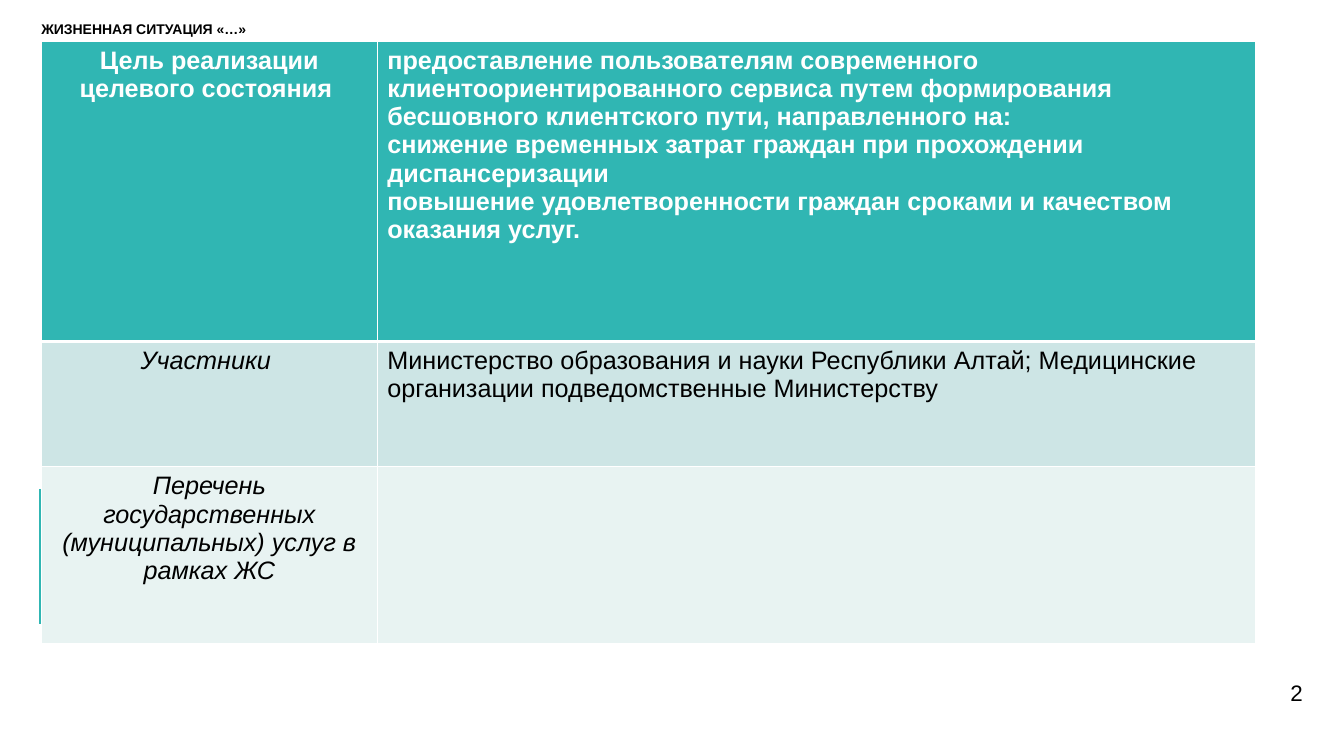
from dataclasses import dataclass

from lxml import etree
from pptx import Presentation
from pptx.dml.color import RGBColor
from pptx.enum import shapes, text
from pptx.oxml import ns
from pptx.util import Pt


@dataclass(frozen=True)
class Theme:
    font: str = "Arial"
    teal: str = "30B6B3"
    band: str = "CDE5E5"
    pale: str = "E8F3F2"
    ink: str = "000000"
    white: str = "FFFFFF"
    title_size: float = 10
    table_size: float = 18
    number_size: float = 16


THEME = Theme()
CENTER, RIGHT = text.PP_ALIGN.CENTER, text.PP_ALIGN.RIGHT
SIDES = ("L", "R", "T", "B")

# row height, fill, text colour, bold, label, paragraphs
ROWS = [
    (214.5, THEME.teal, THEME.white, True, "Цель реализации целевого состояния ", [
        "предоставление пользователям современного клиентоориентированного сервиса "
        "путем формирования бесшовного клиентского пути, направленного на:",
        "снижение временных затрат граждан при прохождении диспансеризации",
        "повышение удовлетворенности граждан сроками и качеством оказания услуг.",
    ]),
    (89.5, THEME.band, THEME.ink, False, "Участники ", [
        "Министерство образования и науки Республики Алтай; "
        "Медицинские организации подведомственные Министерству",
    ]),
    (126, THEME.pale, THEME.ink, False,
     "Перечень государственных (муниципальных) услуг в рамках ЖС", []),
]


def write(tf, lines, color, align=None, **fmt):
    """Put one paragraph per line into the frame; fmt holds font attributes."""
    for i, line in enumerate(lines):
        p = tf.paragraphs[0] if i == 0 else tf.add_paragraph()
        p.alignment = align
        r = p.add_run()
        r.text = line
        for name, value in {"name": THEME.font, **fmt}.items():
            setattr(r.font, name, value)
        r.font.color.rgb = RGBColor.from_string(color)


def add_text(slide, box, line, **fmt):
    tf = slide.shapes.add_textbox(*map(Pt, box)).text_frame
    frame = {"word_wrap": True, "margin_left": 0, "margin_top": 0,
             "margin_right": 0, "margin_bottom": 0}
    for name, value in frame.items():
        setattr(tf, name, value)
    write(tf, [line], THEME.ink, **fmt)
    return tf


def add_title(slide, box):
    tf = add_text(slide, box, "ЖИЗНЕННАЯ СИТУАЦИЯ «…»",
                  size=Pt(THEME.title_size), bold=True)
    tf.paragraphs[0].line_spacing = 0.9


def add_number(slide, box):
    tf = add_text(slide, box, "2", align=RIGHT, size=Pt(THEME.number_size))
    tf.vertical_anchor = text.MSO_ANCHOR.MIDDLE


def add_side_line(slide, box):
    x, y, _, h = box
    line = slide.shapes.add_connector(
        shapes.MSO_CONNECTOR.STRAIGHT, Pt(x), Pt(y), Pt(x), Pt(y + h))
    line.line.color.rgb = RGBColor.from_string(THEME.teal)
    line.line.width = Pt(2.25)
    etree.SubElement(line._element.spPr, ns.qn("a:effectLst"))


def set_borders(cell, widths):
    tcPr = cell._tc.get_or_add_tcPr()
    for i, side in enumerate(SIDES):
        ln = etree.Element(ns.qn(f"a:ln{side}"), w=str(Pt(widths[side])))
        fill = etree.SubElement(ln, ns.qn("a:solidFill"))
        etree.SubElement(fill, ns.qn("a:srgbClr"), val=THEME.white)
        tcPr.insert(i, ln)


def add_goal_table(slide, box):
    x, y, w, h = box
    label_w = 240
    table = slide.shapes.add_table(len(ROWS), 2, Pt(x), Pt(y), Pt(w), Pt(h)).table
    for col, width in zip(table.columns, (label_w, w - label_w)):
        col.width = Pt(width)
    for i, (height, fill, color, bold, label, lines) in enumerate(ROWS):
        table.rows[i].height = Pt(height)
        widths = dict.fromkeys(SIDES, 1)
        if i == 0:
            widths["B"] = 3
        elif i == 1:
            widths["T"] = 3
        contents = (([label], CENTER, not bold), (lines, None, False))
        for cell, (paras, align, italic) in zip(table.rows[i].cells, contents):
            cell.fill.solid()
            cell.fill.fore_color.rgb = RGBColor.from_string(fill)
            set_borders(cell, widths)
            write(cell.text_frame, paras, color, align,
                  size=Pt(THEME.table_size), bold=bold, italic=italic)


def main():
    prs = Presentation()
    prs.slide_width, prs.slide_height = Pt(960), Pt(540)
    slide = prs.slides.add_slide(prs.slide_layouts[6])
    left = 29.5
    add_title(slide, (left, 16, 795.5, 28))
    add_number(slide, (854, 479.5, 76.5, 31))
    add_side_line(slide, (left - 0.5, 349, 0, 96.5))
    add_goal_table(slide, (left, 29.5, 867.5, sum(row[0] for row in ROWS)))
    prs.save("out.pptx")


if __name__ == "__main__":
    main()
